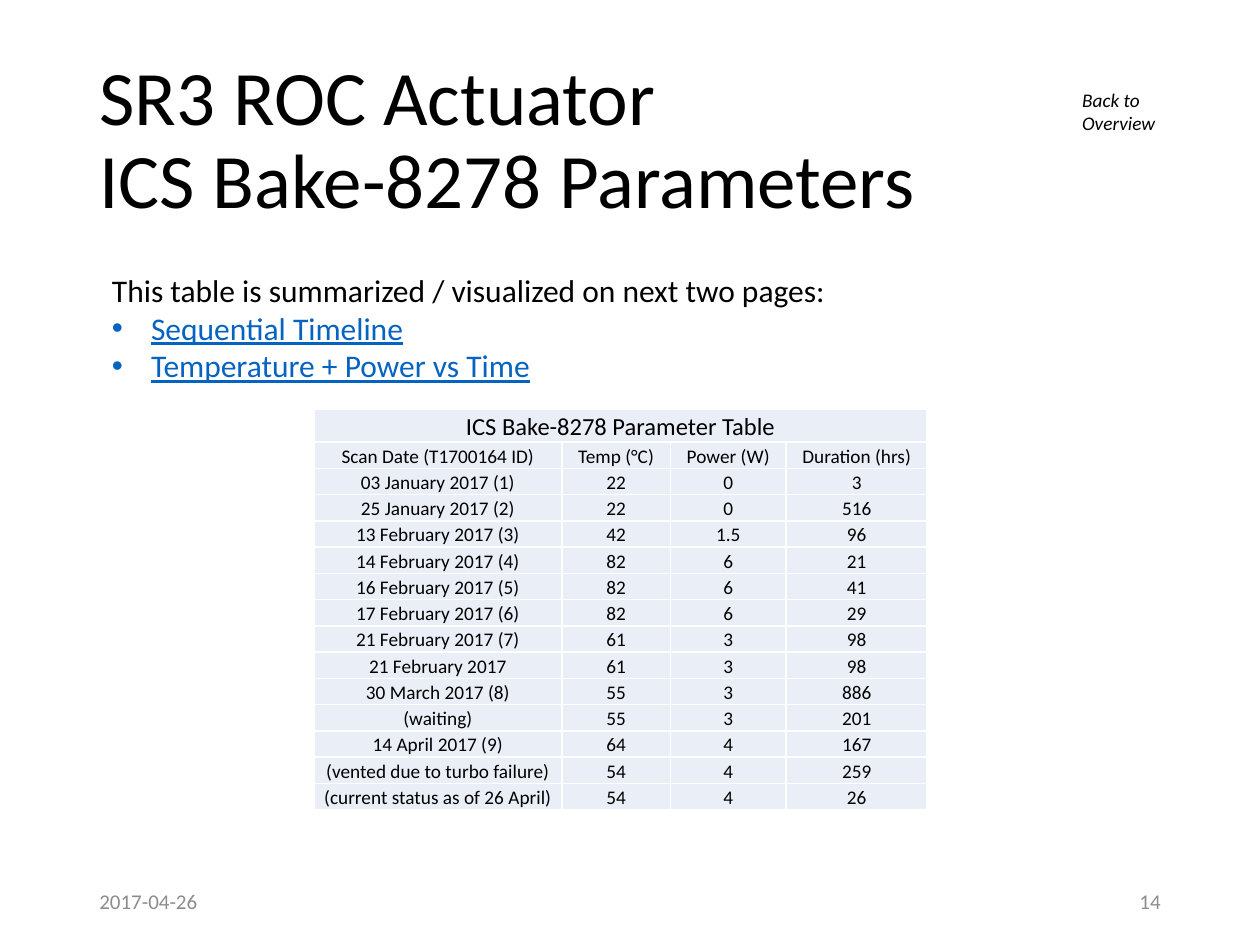
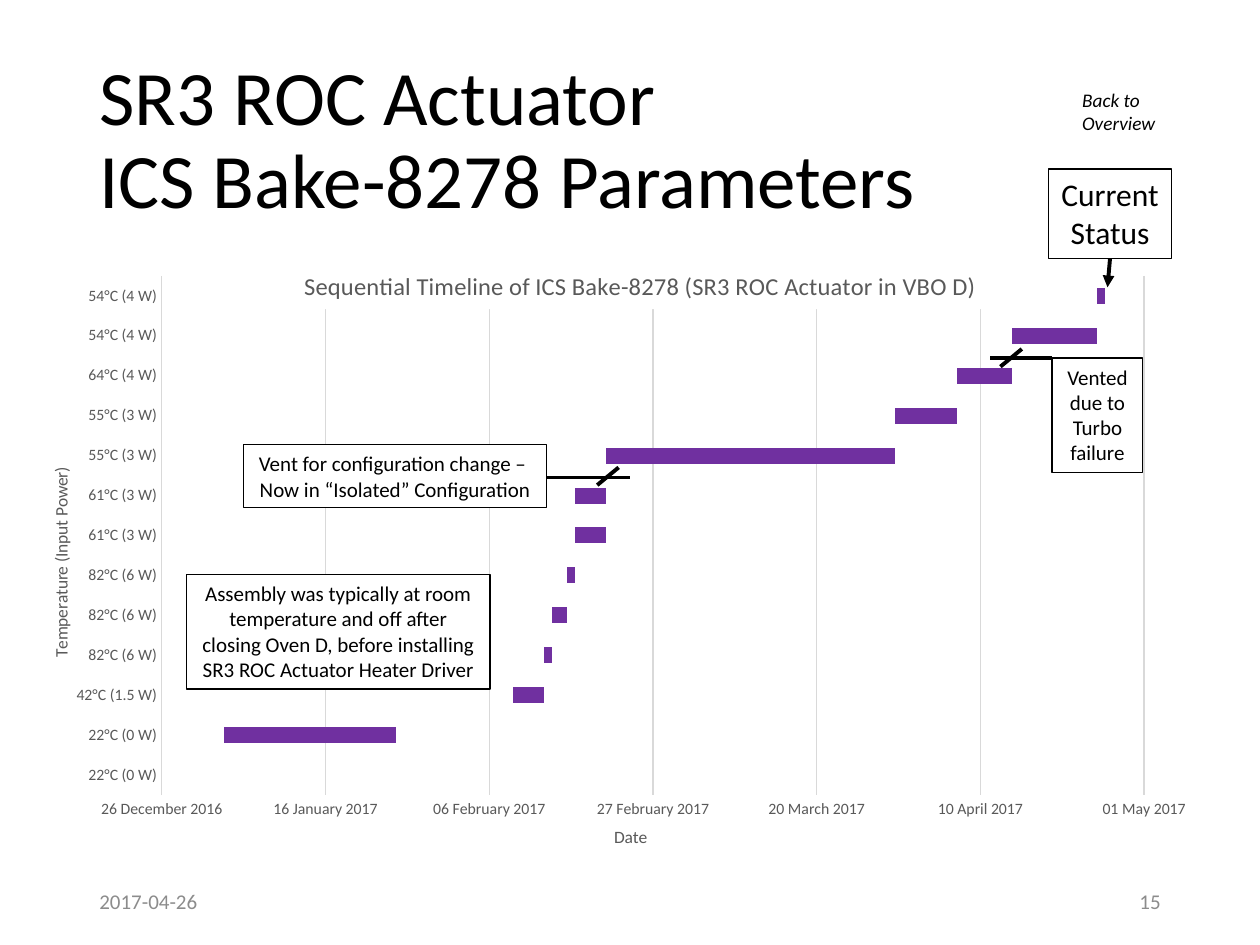
from dataclasses import dataclass

import pptx
import pptx.chart.data
import pptx.dml.color
import pptx.enum.chart
import pptx.enum.shapes
import pptx.enum.text
import pptx.oxml
import pptx.oxml.ns
import pptx.util
from pptx.util import Inches, Pt

ALIGN = pptx.enum.text.PP_ALIGN
ANCHOR = pptx.enum.text.MSO_ANCHOR


@dataclass(frozen=True)
class Theme:
    font: str = "Calibri"
    black: str = "000000"
    white: str = "FFFFFF"
    footer: str = "8C8C8C"
    link: str = "0563C1"
    cell: str = "EAEFF7"
    chart_text: str = "595959"
    grid: str = "D9D9D9"
    bar: str = "7030A0"
    title_size: float = 44
    body_size: float = 18
    heading_size: float = 14
    note_size: float = 12
    small_size: float = 11
    axis_title_size: float = 10
    tick_size: float = 9


THEME = Theme()

TITLE_LINES = ["SR3 ROC Actuator", "ICS Bake-8278 Parameters"]
DATE = "2017-04-26"
FIRST_PAGE = 14
BACK_LABEL = "Back to Overview"

INTRO = "This table is summarized / visualized on next two pages:"
LINK_LABELS = ["Sequential Timeline", "Temperature + Power vs Time"]

TABLE_TITLE = "ICS Bake-8278 Parameter Table"
TABLE_HEADER = ("Scan Date (T1700164 ID)", "Temp (°C)", "Power (W)", "Duration (hrs)")
COLUMN_WIDTHS = [1.97, 0.86, 0.92, 1.12]
TABLE_HEIGHT, TABLE_TITLE_HEIGHT = 3.18, 0.26

# Scan date, temperature, power, hours, start as a spreadsheet day number
SCANS = [
    ("03 January 2017 (1)", 22, 0, 3, 42738),
    ("25 January 2017 (2)", 22, 0, 516, 42738),
    ("13 February 2017 (3)", 42, 1.5, 96, 42775),
    ("14 February 2017 (4)", 82, 6, 21, 42779),
    ("16 February 2017 (5)", 82, 6, 41, 42780),
    ("17 February 2017 (6)", 82, 6, 29, 42782),
    ("21 February 2017 (7)", 61, 3, 98, 42783),
    ("21 February 2017", 61, 3, 98, 42783),
    ("30 March 2017 (8)", 55, 3, 886, 42787),
    ("(waiting)", 55, 3, 201, 42824),
    ("14 April 2017 (9)", 64, 4, 167, 42832),
    ("(vented due to turbo failure)", 54, 4, 259, 42839),
    ("(current status as of 26 April)", 54, 4, 26, 42850),
]

CHART_TITLE = "Sequential Timeline of ICS Bake-8278 (SR3 ROC Actuator in VBO D)"
FIRST_DAY, LAST_DAY, DAY_STEP = 42730, 42860, 21
DATE_FORMAT = r"[$-1C09]dd\ mmmm\ yyyy;@"

# Box, paragraphs, type size, wrapping
CALLOUTS = [
    ((8.32, 1.34, 0.98, 0.71), ["Current", "Status"], THEME.body_size, False),
    ((8.35, 2.84, 0.72, 0.91), ["Vented due to Turbo failure"], THEME.note_size, True),
    ((1.93, 3.53, 2.41, 0.5),
     ["Vent for configuration change – ", "Now in “Isolated” Configuration"],
     THEME.note_size, True),
    ((1.48, 4.56, 2.41, 0.91),
     ["Assembly was typically at room temperature and off after closing Oven D, "
      "before installing SR3 ROC Actuator Heater Driver"], THEME.note_size, True),
]

# Start, end, arrowhead
CALLOUT_LINES = [
    ((8.35, 2.84), (7.86, 2.84), False),
    ((8.81, 2.05), (8.79, 2.28), True),
    ((4.34, 3.79), (5, 3.79), False),
    ((4.74, 3.85), (4.91, 3.71), False),
    ((7.94, 2.91), (8.11, 2.77), False),
]


def rgb(color):
    return pptx.dml.color.RGBColor.from_string(color)


def style_font(font, size, color=THEME.black):
    font.name, font.size, font.bold = THEME.font, Pt(size), False
    font.color.rgb = rgb(color)


def add_run(paragraph, text, size, color=THEME.black, align=ALIGN.LEFT):
    paragraph.alignment = align
    run = paragraph.add_run()
    run.text = text
    style_font(run.font, size, color)
    return run


def add_paragraphs(frame, texts, size, color=THEME.black, align=ALIGN.LEFT):
    """Fill an empty text frame and return its runs, one for each paragraph."""
    runs = []
    for index, text in enumerate(texts):
        paragraph = frame.add_paragraph() if index else frame.paragraphs[0]
        runs.append(add_run(paragraph, text, size, color, align))
    return runs


def add_text(slide, box, texts, size, color=THEME.black, align=ALIGN.LEFT,
             anchor=ANCHOR.TOP, wrap=True):
    frame = slide.shapes.add_textbox(*map(Inches, box)).text_frame
    frame.word_wrap, frame.vertical_anchor = wrap, anchor
    return frame, add_paragraphs(frame, texts, size, color, align)


def add_page(presentation, number):
    """Add a slide with the shared title and footer."""
    slide = presentation.slides.add_slide(presentation.slide_layouts[5])
    title = slide.shapes.title
    title.left, title.top, title.width, title.height = map(Inches, (0.69, 0.4, 8.62, 1.45))
    frame = title.text_frame
    frame.auto_size = pptx.enum.text.MSO_AUTO_SIZE.NONE
    frame.vertical_anchor = ANCHOR.MIDDLE
    paragraph = frame.paragraphs[0]
    paragraph.line_spacing = 0.9
    for index, line in enumerate(TITLE_LINES):
        if index:
            paragraph.add_line_break()
        add_run(paragraph, line, THEME.title_size)

    for left, text, align in [(0.69, DATE, ALIGN.LEFT), (7.06, str(number), ALIGN.RIGHT)]:
        add_text(slide, (left, 6.95, 2.25, 0.4), [text], THEME.note_size,
                 THEME.footer, align, ANCHOR.MIDDLE)
    return slide


def add_back_label(slide):
    _, runs = add_text(slide, (8.49, 0.65, 0.83, 0.47), [BACK_LABEL], THEME.small_size)
    runs[0].font.italic = True


def add_bullet(paragraph):
    properties = paragraph._p.get_or_add_pPr()
    indent = Inches(0.31)
    properties.set("marL", str(indent))
    properties.set("indent", str(-indent))
    namespace = pptx.oxml.ns.nsdecls("a")
    properties.append(pptx.oxml.parse_xml(f'<a:buFont {namespace} typeface="Arial"/>'))
    properties.append(pptx.oxml.parse_xml(f'<a:buChar {namespace} char="•"/>'))


def add_intro(slide):
    frame, runs = add_text(slide, (0.79, 2.1, 5.98, 1.01), [INTRO, *LINK_LABELS],
                           THEME.body_size, wrap=False)
    for paragraph, run in zip(frame.paragraphs[1:], runs[1:]):
        add_bullet(paragraph)
        run.font.color.rgb = rgb(THEME.link)
        run.font.underline = True


def fill_cell(cell, text, size):
    cell.margin_left = cell.margin_right = cell.margin_top = Inches(0.01)
    cell.margin_bottom = 0
    cell.vertical_anchor = ANCHOR.BOTTOM
    cell.fill.solid()
    cell.fill.fore_color.rgb = rgb(THEME.cell)
    add_run(cell.text_frame.paragraphs[0], text, size, align=ALIGN.CENTER)


def add_parameter_table(slide):
    rows = [TABLE_HEADER] + [scan[:4] for scan in SCANS]
    box = (2.49, 3.25, sum(COLUMN_WIDTHS), TABLE_HEIGHT)
    table = slide.shapes.add_table(len(rows) + 1, len(COLUMN_WIDTHS),
                                   *map(Inches, box)).table
    table.first_row = table.horz_banding = False
    for column, width in zip(table.columns, COLUMN_WIDTHS):
        column.width = Inches(width)
    row_height = (TABLE_HEIGHT - TABLE_TITLE_HEIGHT) / len(rows)
    for index, row in enumerate(table.rows):
        row.height = Inches(row_height if index else TABLE_TITLE_HEIGHT)
    table.cell(0, 0).merge(table.cell(0, len(COLUMN_WIDTHS) - 1))
    fill_cell(table.cell(0, 0), TABLE_TITLE, THEME.heading_size)
    for row_index, values in enumerate(rows, start=1):
        for column_index, value in enumerate(values):
            fill_cell(table.cell(row_index, column_index), str(value), THEME.small_size)


def place_in_chart(element, index, **fractions):
    """Give a chart part a manual layout as its child number index."""
    for layout in element.xpath("c:layout"):
        element.remove(layout)
    target = '<c:layoutTarget val="inner"/>' if "w" in fractions else ""
    modes = "".join(f'<c:{key}Mode val="edge"/>' for key in "xy")
    values = "".join(f'<c:{key} val="{value}"/>' for key, value in fractions.items())
    element.insert(index, pptx.oxml.parse_xml(
        f'<c:layout {pptx.oxml.ns.nsdecls("c")}><c:manualLayout>'
        f'{target}{modes}{values}</c:manualLayout></c:layout>'))


def add_timeline(slide):
    data = pptx.chart.data.CategoryChartData()
    data.categories = [f"{temp}°C ({power} W)" for _, temp, power, _, _ in SCANS]
    data.add_series("Series 1", [scan[4] for scan in SCANS])
    data.add_series("Series 2", [round(scan[3] / 24) for scan in SCANS])
    chart = slide.shapes.add_chart(pptx.enum.chart.XL_CHART_TYPE.BAR_STACKED,
                                   *map(Inches, (0.37, 1.97, 9.43, 4.8)), data).chart
    style_font(chart.font, THEME.axis_title_size)
    chart.has_legend = False
    plot = chart.plots[0]
    plot.gap_width, plot.overlap, plot.vary_by_categories = 150, 100, False
    offset, duration = plot.series
    offset.format.fill.background()
    duration.format.fill.solid()
    duration.format.fill.fore_color.rgb = rgb(THEME.bar)

    scan_axis, date_axis = chart.category_axis, chart.value_axis
    for axis, title in [(scan_axis, "Temperature (Input Power)"), (date_axis, "Date")]:
        axis.major_tick_mark = axis.minor_tick_mark = pptx.enum.chart.XL_TICK_MARK.NONE
        style_font(axis.tick_labels.font, THEME.tick_size, THEME.chart_text)
        add_run(axis.axis_title.text_frame.paragraphs[0], title,
                THEME.axis_title_size, THEME.chart_text, ALIGN.CENTER)
    date_axis.minimum_scale, date_axis.maximum_scale = FIRST_DAY, LAST_DAY
    date_axis.major_unit = DAY_STEP
    date_axis.tick_labels.number_format = DATE_FORMAT
    date_axis.tick_labels.number_format_is_linked = False
    date_axis.format.line.fill.background()
    scan_axis.has_major_gridlines = False
    for line in (scan_axis.format.line, date_axis.major_gridlines.format.line):
        line.color.rgb = rgb(THEME.grid)
        line.width = Pt(0.75)

    add_run(chart.chart_title.text_frame.paragraphs[0], CHART_TITLE,
            THEME.heading_size, THEME.chart_text, ALIGN.CENTER)
    chart.chart_title.format.fill.solid()
    chart.chart_title.format.fill.fore_color.rgb = rgb(THEME.white)

    chart_element = chart.element.xpath("c:chart")[0]
    place_in_chart(chart_element.xpath("c:plotArea")[0], 0, x=0.097, y=0.046, w=0.853, h=0.863)
    place_in_chart(chart_element.xpath("c:title")[0], 1, x=0.213, y=0.027)
    scan_title = chart_element.xpath(".//c:catAx/c:title")[0]
    place_in_chart(scan_title, 1, x=0, y=0.36)
    scan_title.xpath(".//a:bodyPr")[0].set("rot", "-5400000")
    place_in_chart(chart_element.xpath(".//c:valAx/c:title")[0], 1, x=0.475, y=0.955)


def add_callout(slide, box, texts, size, wrap):
    shape = slide.shapes.add_shape(pptx.enum.shapes.MSO_SHAPE.RECTANGLE, *map(Inches, box))
    shape.shadow.inherit = False
    shape.fill.solid()
    shape.fill.fore_color.rgb = rgb(THEME.white)
    shape.line.color.rgb = rgb(THEME.black)
    shape.line.width = Pt(0.75)
    frame = shape.text_frame
    frame.word_wrap, frame.vertical_anchor = wrap, ANCHOR.TOP
    add_paragraphs(frame, texts, size, align=ALIGN.CENTER)


def add_line(slide, start, end, arrow):
    connector = slide.shapes.add_connector(pptx.enum.shapes.MSO_CONNECTOR.STRAIGHT,
                                           *map(Inches, start + end))
    connector.line.color.rgb = rgb(THEME.black)
    connector.line.width = Pt(2.25)
    namespace = pptx.oxml.ns.nsdecls("a")
    properties = connector.element.spPr
    if arrow:
        properties.find(pptx.oxml.ns.qn("a:ln")).append(
            pptx.oxml.parse_xml(f'<a:tailEnd {namespace} type="triangle"/>'))
    properties.append(pptx.oxml.parse_xml(f"<a:effectLst {namespace}/>"))


def main():
    presentation = pptx.Presentation()
    presentation.slide_width, presentation.slide_height = Inches(10), Inches(7.5)

    table_slide = add_page(presentation, FIRST_PAGE)
    add_parameter_table(table_slide)
    add_intro(table_slide)
    add_back_label(table_slide)

    timeline_slide = add_page(presentation, FIRST_PAGE + 1)
    add_timeline(timeline_slide)
    for callout in CALLOUTS:
        add_callout(timeline_slide, *callout)
    for line in CALLOUT_LINES:
        add_line(timeline_slide, *line)
    add_back_label(timeline_slide)

    presentation.save("out.pptx")


if __name__ == "__main__":
    main()
